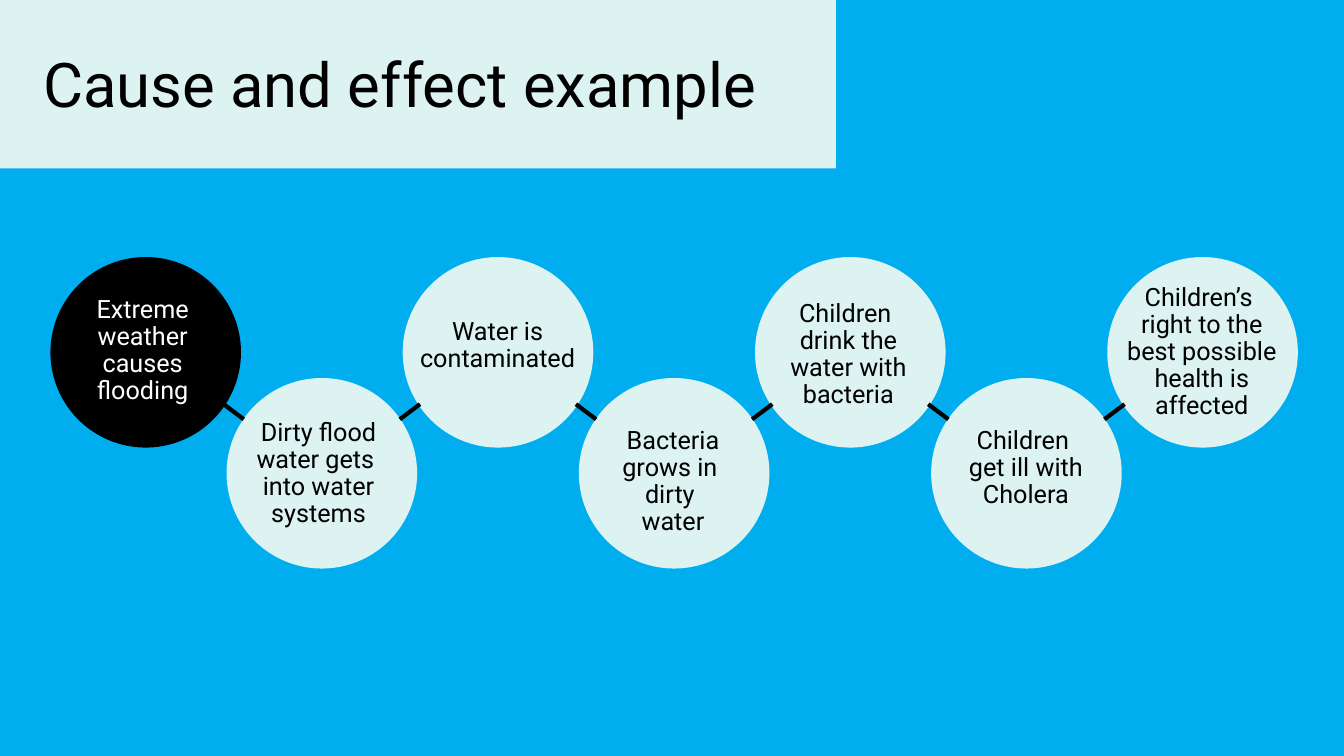
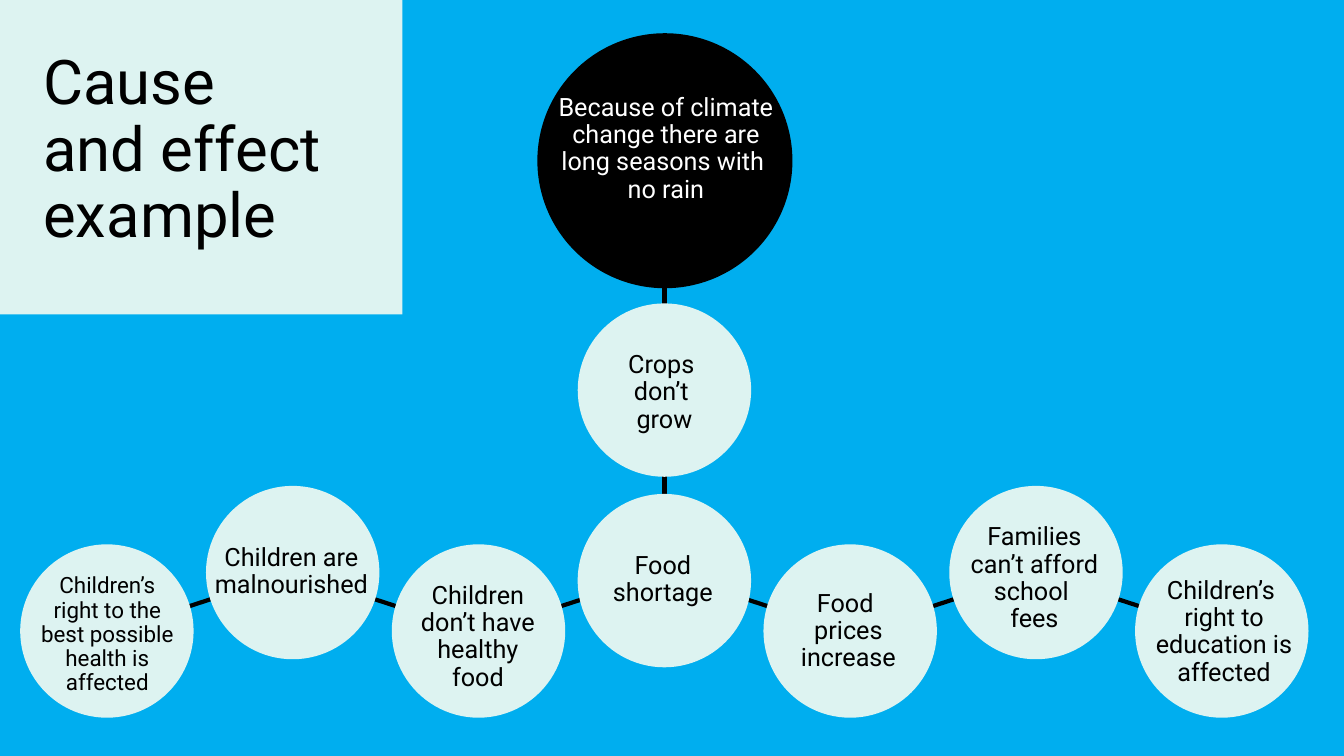
"""Build two cause-and-effect chain slides."""
from itertools import pairwise

from lxml.etree import SubElement
from pptx import Presentation
from pptx.dml.color import RGBColor
from pptx.enum.shapes import MSO_CONNECTOR, MSO_SHAPE
from pptx.enum.text import PP_ALIGN
from pptx.oxml.ns import qn
from pptx.util import Inches, Pt

COLOURS = {"sky": "00AEEF", "mint": "DDF3F1", "black": "000000", "white": "FFFFFF"}
FONT = "Roboto"


def add_panel(slide, preset, box, colour):
    panel = slide.shapes.add_shape(preset, *map(Inches, box))
    panel.shadow.inherit = False
    panel.fill.solid()
    panel.fill.fore_color.rgb = RGBColor.from_string(COLOURS[colour])
    panel.line.fill.background()


def add_label(slide, box, text, size=18, colour="black", align=PP_ALIGN.CENTER):
    frame = slide.shapes.add_textbox(*map(Inches, box)).text_frame
    frame.word_wrap = True
    frame.margin_left = frame.margin_right = frame.margin_top = frame.margin_bottom = 0
    paragraph = frame.paragraphs[0]
    paragraph.alignment = align
    paragraph.line_spacing = 0.9
    for index, line in enumerate(text.split("\n")):
        if index:
            paragraph.add_line_break()
        run = paragraph.add_run()
        run.text = line
        run.font.name = FONT
        run.font.size = Pt(size)
        run.font.color.rgb = RGBColor.from_string(COLOURS[colour])


prs = Presentation()
prs.slide_width, prs.slide_height = Inches(13.33), Inches(7.5)
backdrop = prs.slide_master.background.fill
backdrop.solid()
backdrop.fore_color.rgb = RGBColor.from_string(COLOURS["sky"])
flood, drought = [prs.slides.add_slide(prs.slide_layouts[6]) for _ in range(2)]

flood_size, flood_step, flood_left = 1.89, 1.747, 0.5
flood_tops = [2.55, 3.75]
flood_chain = [
    ((0.67, 2.94, 1.49, 1.36), "Extreme weather causes flooding"),
    ((2.33, 4.16, 1.66, 1.36), "Dirty flood water gets \ninto water systems"),
    ((3.99, 3.16, 1.89, 1.06), "Water is contaminated"),
    ((5.89, 4.24, 1.57, 1.28), "Bacteria grows in \ndirty \nwater"),
    ((7.63, 2.98, 1.57, 1.28), "Children \ndrink the water with bacteria"),
    ((9.23, 4.24, 1.89, 1.28), "Children \nget ill with Cholera"),
    ((11.06, 2.82, 1.72, 1.57),
     "Children’s \nright to the best possible health is affected"),
]

drought_size, drought_step, drought_left = 1.72, 1.843, 0.2
drought_chain = [
    (5.4, (0.35, 5.7, 1.43, 1.17),
     "Children’s right to the best possible health is affected", 16),
    (4.82, (2.03, 5.4, 1.72, 1.05), "Children are malnourished", 18),
    (5.4, (4.07, 5.78, 1.34, 1.25), "Children don’t have healthy food", 18),
    (4.9, (5.86, 5.48, 1.43, 0.97), "Food shortage", 18),
    (5.4, (7.7, 5.86, 1.43, 1.17), "Food \nprices increase", 18),
    (4.82, (9.59, 5.2, 1.34, 1.25), "Families can’t afford school \nfees", 18),
    (5.4, (11.28, 5.73, 1.72, 1.31), "Children’s \nright to education is affected", 18),
]

flood_links = []
for index in range(len(flood_chain) - 1):
    middle = flood_left + (flood_size + flood_step) / 2 + index * flood_step
    reach = -0.1 if index % 2 else 0.1
    flood_links.append((middle - reach, 4.01, middle + reach, 4.16))

drought_centres = [
    (drought_left + drought_size / 2 + index * drought_step, 5.68 if index % 2 else 6.28)
    for index in range(len(drought_chain))
]
drought_links = [(*start, *end) for start, end in pairwise(drought_centres)]
drought_links.append((6.59, 2.86, 6.59, 5.48))

add_panel(flood, MSO_SHAPE.RECTANGLE, (0, 0, 8.29, 1.67), "mint")
add_label(flood, (0.43, 0.54, 7.59, 0.81), "Cause and effect example", 44,
          align=PP_ALIGN.LEFT)
for index, (label_box, text) in enumerate(flood_chain):
    circle = (flood_left + index * flood_step, flood_tops[index % 2], flood_size, flood_size)
    add_panel(flood, MSO_SHAPE.OVAL, circle, "mint" if index else "black")
    add_label(flood, label_box, text, colour="black" if index else "white")

for slide, links in ((flood, flood_links), (drought, drought_links)):
    for ends in links:
        link = slide.shapes.add_connector(MSO_CONNECTOR.STRAIGHT, *map(Inches, ends))
        link.line.width = Pt(3)
        link.line.color.rgb = RGBColor.from_string(COLOURS["black"])
        SubElement(link._element.spPr, qn("a:effectLst"))

add_panel(drought, MSO_SHAPE.OVAL, (5.33, 0.33, 2.53, 2.53), "black")
add_label(drought, (5.54, 0.94, 2.13, 1.6),
          "Because of climate change there are long seasons with \nno rain", colour="white")
add_panel(drought, MSO_SHAPE.OVAL, (5.73, 3.01, drought_size, drought_size), "mint")
add_label(drought, (5.92, 3.49, 1.34, 1.17), "Crops \ndon’t \ngrow")
for index, (top, label_box, text, size) in enumerate(drought_chain):
    circle = (drought_left + index * drought_step, top, drought_size, drought_size)
    add_panel(drought, MSO_SHAPE.OVAL, circle, "mint")
    add_label(drought, label_box, text, size)
add_panel(drought, MSO_SHAPE.RECTANGLE, (0, 0, 3.99, 3.12), "mint")
add_label(drought, (0.43, 0.51, 3.55, 2.1), "Cause \nand effect example", 44,
          align=PP_ALIGN.LEFT)

prs.save("out.pptx")
